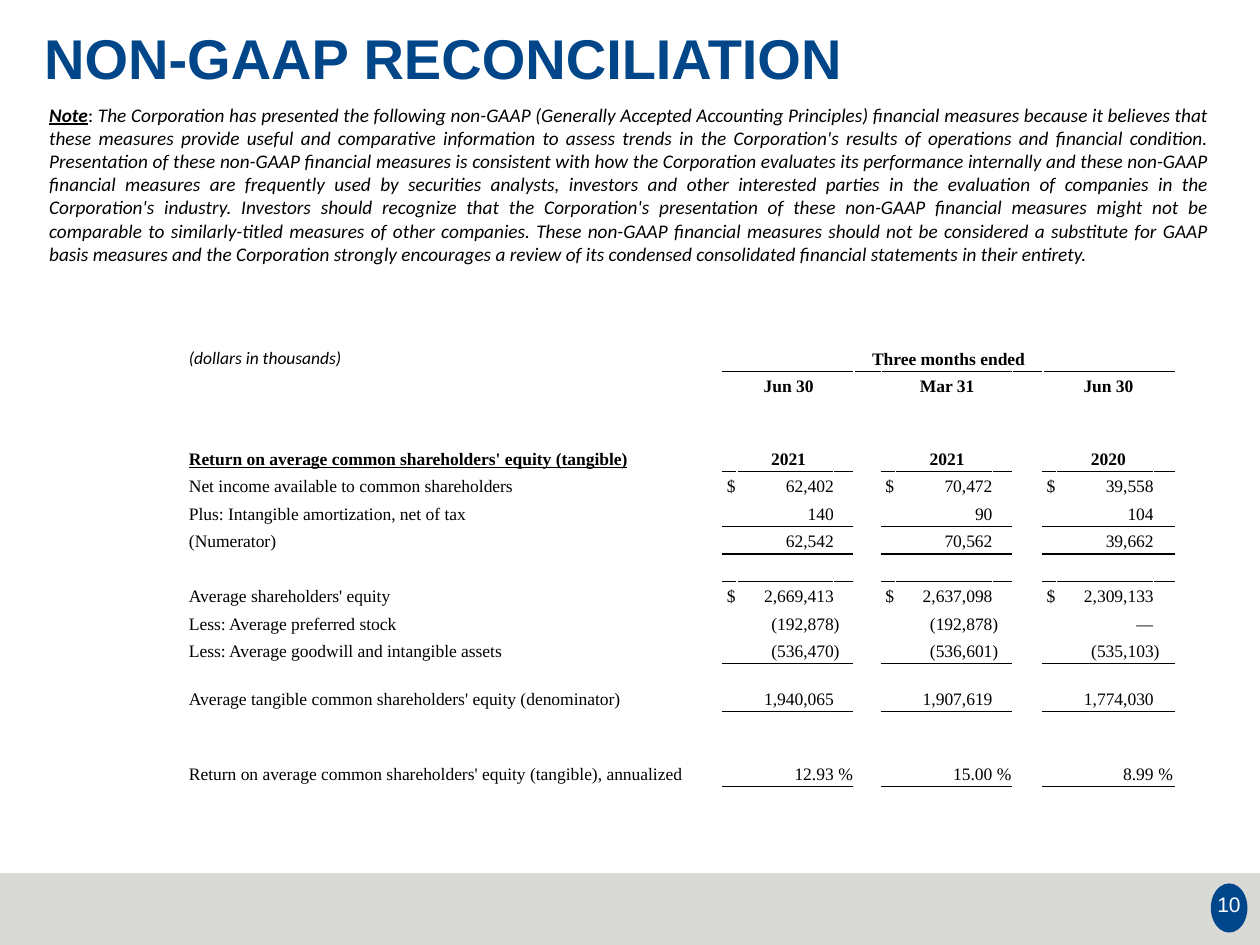
from lxml.etree import SubElement
from pptx import Presentation
from pptx.dml.color import RGBColor
from pptx.enum.shapes import MSO_SHAPE
from pptx.enum.text import MSO_ANCHOR, MSO_AUTO_SIZE, PP_ALIGN
from pptx.oxml.ns import qn
from pptx.util import Pt

BLUE = RGBColor(0x00, 0x46, 0x89)
BADGE_BLUE = RGBColor(0x00, 0x46, 0x8B)
GREY = RGBColor(0xD9, 0xD9, 0xD6)
BLACK = RGBColor(0, 0, 0)
WHITE = RGBColor(0xFF, 0xFF, 0xFF)
SERIF = "Times New Roman"

NOTE_SENTENCES = (
    "The Corporation has presented the following non-GAAP (Generally Accepted Accounting "
    "Principles) financial measures because it believes that these measures provide useful and "
    "comparative information to assess trends in the Corporation's results of operations and "
    "financial condition.",
    "Presentation of these non-GAAP financial measures is consistent with "
    "how the Corporation evaluates its performance internally and these non-GAAP financial "
    "measures are frequently used by securities analysts, investors and other interested parties "
    "in the evaluation of companies in the Corporation's industry.",
    "Investors should recognize "
    "that the Corporation's presentation of these non-GAAP financial measures might not be "
    "comparable to similarly-titled measures of other companies.",
    "These non-GAAP financial "
    "measures should not be considered a substitute for GAAP basis measures and the Corporation "
    "strongly encourages a review of its condensed consolidated financial statements in their "
    "entirety.",
)

# Table grid: label, spacer, then three periods of sign, amount and suffix with gaps between
PERIOD = [7.9, 55.4, 11.6]
COLUMN_WIDTHS = [266.4, 41, *PERIOD, 15.8, *PERIOD, 17.3, *PERIOD]
PERIOD_STARTS = (2, 6, 10)
PERIOD_COLUMNS = {start + offset for start in PERIOD_STARTS for offset in range(3)}
ROW_HEIGHT = 15.7
TALL_ROWS = {3: 25.9, 11: 27.4, 13: 27.2}
ROW_COUNT = 15
RULED_ROWS = {3, 5, 6, 7, 10, 11, 13}

# Row number: three period headings
HEADINGS = {1: ("Jun 30", "Mar 31", "Jun 30"), 3: ("2021", "2021", "2020")}
# Row number: label, three amounts
FIGURES = {
    4: ("Net income available to common shareholders", "$62,402", "$70,472", "$39,558"),
    5: ("Plus: Intangible amortization, net of tax", "140", "90", "104"),
    6: ("(Numerator)", "62,542", "70,562", "39,662"),
    8: ("Average shareholders' equity", "$2,669,413", "$2,637,098", "$2,309,133"),
    9: ("Less: Average preferred stock", "(192,878)", "(192,878)", "—"),
    10: ("Less: Average goodwill and intangible assets", "(536,470)", "(536,601)", "(535,103)"),
    11: ("Average tangible common shareholders' equity (denominator)",
         "1,940,065", "1,907,619", "1,774,030"),
    13: ("Return on average common shareholders' equity (tangible), annualized",
         "12.93%", "15.00%", "8.99%"),
}


def style_font(font, size, name, color, bold=False, italic=False, underline=False):
    font.size, font.name = Pt(size), name
    font.bold, font.italic, font.underline = bold, italic, underline
    font.color.rgb = color


def set_frame(shape, anchor=MSO_ANCHOR.TOP):
    frame = shape.text_frame
    frame.word_wrap = True
    frame.auto_size = MSO_AUTO_SIZE.NONE
    frame.vertical_anchor = anchor
    frame.margin_left = frame.margin_right = frame.margin_bottom = Pt(7.2)
    frame.margin_top = Pt(4.3)
    return frame


def add_plain_shape(slide, kind, box, color):
    shape = slide.shapes.add_shape(kind, *map(Pt, box))
    shape.shadow.inherit = False
    shape.fill.solid()
    shape.fill.fore_color.rgb = color
    shape.line.fill.background()


def add_footer(slide, left, top, width, height):
    add_plain_shape(slide, MSO_SHAPE.RECTANGLE, (left, top, width, height), GREY)
    badge_left, badge_top = left + width - 28.1, top + 5.8
    add_plain_shape(slide, MSO_SHAPE.OVAL, (badge_left, badge_top, 20.9, 28.1), BADGE_BLUE)
    number = slide.shapes.add_textbox(Pt(badge_left - 6.5), Pt(badge_top - 0.7), Pt(33.8), Pt(28.1))
    frame = set_frame(number, MSO_ANCHOR.MIDDLE)
    frame.text = "10"
    paragraph = frame.paragraphs[0]
    paragraph.alignment = PP_ALIGN.CENTER
    style_font(paragraph.runs[0].font, 12, "Arial", WHITE)


def place_title(slide, left, top, width, height):
    title = slide.shapes.title
    title.left, title.top, title.width, title.height = map(Pt, (left, top, width, height))
    frame = set_frame(title)
    frame.text = "NON-GAAP RECONCILIATION"
    paragraph = frame.paragraphs[0]
    paragraph.alignment = PP_ALIGN.LEFT
    paragraph.line_spacing = 0.9
    style_font(paragraph.runs[0].font, 32, "Arial", BLUE, bold=True)


def add_note(slide, left, top, width, height):
    frame = set_frame(slide.shapes.add_textbox(*map(Pt, (left, top, width, height))))
    paragraph = frame.paragraphs[0]
    paragraph.alignment = PP_ALIGN.JUSTIFY
    note = " ".join(NOTE_SENTENCES)
    for text, strong, italic in (("Note", True, True), (": ", False, False), (note, False, True)):
        run = paragraph.add_run()
        run.text = text
        style_font(run.font, 11, "Calibri", BLACK, strong, italic, strong)


def is_ruled(row, column):
    """Whether a black rule runs below this cell."""
    return (row == 0 and column >= 2) or (row in RULED_ROWS and column in PERIOD_COLUMNS)


def format_empty_cell(cell, row, column):
    cell.margin_left = cell.margin_right = cell.margin_top = 0
    cell.margin_bottom = Pt(1.4)
    cell.vertical_anchor = MSO_ANCHOR.BOTTOM
    properties = cell._tc.get_or_add_tcPr()
    edges = {"L": False, "R": False, "T": is_ruled(row - 1, column), "B": is_ruled(row, column)}
    for side, ruled in edges.items():
        line = SubElement(properties, qn(f"a:ln{side}"), w=str(Pt(1)))
        fill = SubElement(line, qn("a:solidFill"))
        SubElement(fill, qn("a:srgbClr"), val=str(BLACK if ruled else WHITE))
    cell.fill.background()
    # Small end mark, so that empty cells do not stretch their row
    SubElement(cell.text_frame.paragraphs[0]._p, qn("a:endParaRPr"), sz="1000")


def write_cell(table, row, column, text, span=1, alignment=PP_ALIGN.LEFT, margins=(2.2, 2.2),
               font_name=SERIF, **style):
    cell = table.cell(row, column)
    if span > 1:
        cell.merge(table.cell(row, column + span - 1))
    cell.margin_left, cell.margin_right = map(Pt, margins)
    if text:
        paragraph = cell.text_frame.paragraphs[0]
        paragraph.text = text
        paragraph.alignment = alignment
        style_font(paragraph.runs[0].font, 10, font_name, BLACK, **style)


def write_amount(table, row, start, value):
    amount = value.strip("$)%")
    if value.startswith("$"):
        write_cell(table, row, start, "$", margins=(2.2, 0))
        write_cell(table, row, start + 1, amount, alignment=PP_ALIGN.RIGHT, margins=(0, 0))
    else:
        write_cell(table, row, start, amount, 2, PP_ALIGN.RIGHT, (2.2, 0))
    if value.endswith(")"):
        write_cell(table, row, start + 2, ")", margins=(0, 0))
    elif value.endswith("%"):
        write_cell(table, row, start + 2, "%", 1, PP_ALIGN.RIGHT, (0, 0.7))


def add_reconciliation(slide, left, top):
    heights = [TALL_ROWS.get(row, ROW_HEIGHT) for row in range(ROW_COUNT)]
    table = slide.shapes.add_table(
        ROW_COUNT, len(COLUMN_WIDTHS), Pt(left), Pt(top),
        Pt(sum(COLUMN_WIDTHS)), Pt(sum(heights))).table
    table.first_row = table.horz_banding = False
    for column, width in zip(table.columns, COLUMN_WIDTHS):
        column.width = Pt(width)
    for row, height in zip(table.rows, heights):
        row.height = Pt(height)
    for row in range(ROW_COUNT):
        for column in range(len(COLUMN_WIDTHS)):
            format_empty_cell(table.cell(row, column), row, column)

    # Headings
    write_cell(table, 0, 0, "(dollars in thousands)", font_name="Calibri", italic=True)
    write_cell(table, 0, 2, "Three months ended", 11, PP_ALIGN.CENTER, bold=True)
    write_cell(table, 3, 0, "Return on average common shareholders' equity (tangible)", 2,
               bold=True, underline=True)
    for row, headings in HEADINGS.items():
        for start, heading in zip(PERIOD_STARTS, headings):
            write_cell(table, row, start, heading, 3, PP_ALIGN.CENTER, bold=True)

    # Figures and the blank rows between them
    for row, (label, *values) in FIGURES.items():
        write_cell(table, row, 0, label, 2)
        for start, value in zip(PERIOD_STARTS, values):
            write_amount(table, row, start, value)
    for row in (2, 7, 12, 14):
        for start in PERIOD_STARTS:
            write_cell(table, row, start, "", 3)


def main():
    presentation = Presentation()
    presentation.slide_width, presentation.slide_height = Pt(720), Pt(540)
    slide = presentation.slides.add_slide(presentation.slide_layouts[5])
    add_footer(slide, 0, 499, 720, 41)
    place_title(slide, 18, 13.7, 696, 82)
    add_note(slide, 21, 54.7, 677.5, 101)
    add_reconciliation(slide, 105.8, 196.6)
    presentation.save("out.pptx")


if __name__ == "__main__":
    main()
